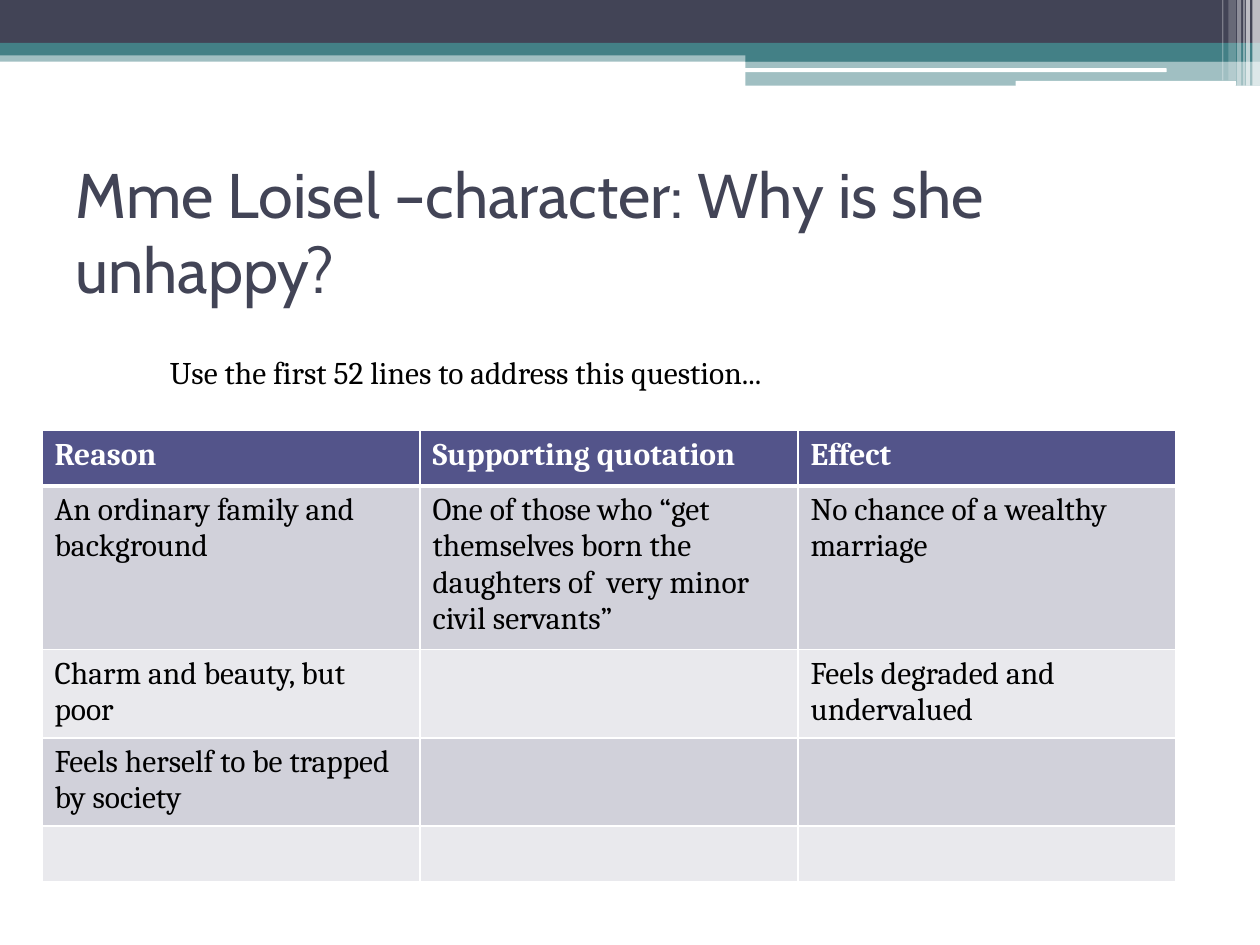
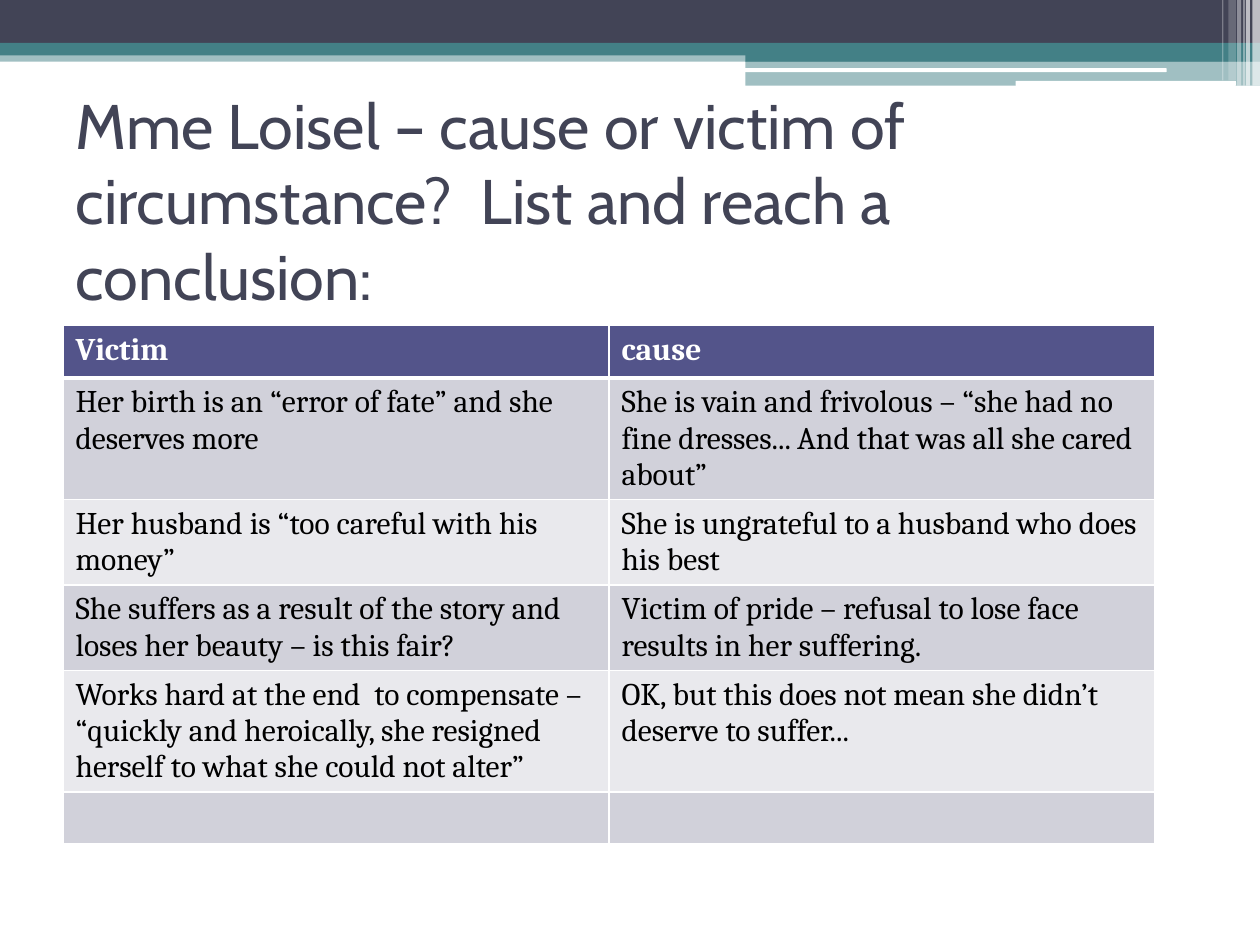
"""Build two discussion slides on Mme Loisel, each with a title and a table."""
from dataclasses import dataclass

from lxml import etree
from pptx import Presentation
from pptx.dml.color import RGBColor
from pptx.enum import shapes, text
from pptx.oxml import ns
from pptx.util import Pt


@dataclass(frozen=True)
class Theme:
    slate: str = "424456"
    teal: str = "438086"
    white: str = "FFFFFF"
    black: str = "000000"
    header: str = "53548A"
    stripes: tuple = ("D1D1DA", "E9E9ED")
    title_font: str = "Cabin"
    body_font: str = "Cambria"
    title_size: int = 36
    body_size: int = 18


theme = Theme()


def style_text(frame, font_name, size, color, bold=False):
    for paragraph in frame.paragraphs:
        paragraph.alignment = text.PP_ALIGN.LEFT
        for run in paragraph.runs:
            run.font.name = font_name
            run.font.size = Pt(size)
            run.font.bold = bold
            run.font.color.rgb = RGBColor.from_string(color)


def style_cell(cell, fill, edges):
    cell.fill.solid()
    cell.fill.fore_color.rgb = RGBColor.from_string(fill)
    properties = cell._tc.get_or_add_tcPr()
    for position, (edge, width) in enumerate(edges.items()):
        line = etree.Element(ns.qn(f"a:{edge}"), w=str(Pt(width)))
        paint = etree.SubElement(line, ns.qn("a:solidFill"))
        etree.SubElement(paint, ns.qn("a:srgbClr"), val=theme.white)
        properties.insert(position, line)


RECT = shapes.MSO_SHAPE.RECTANGLE
ROUND = shapes.MSO_SHAPE.ROUNDED_RECTANGLE
banner = [
    (RECT, 0, 28.8, 720, 6.5, theme.teal, 50),
    (RECT, 0, 0, 720, 24.5, theme.slate, 100),
    (RECT, 0, 24.5, 720, 7.2, theme.teal, 100),
    (RECT, 426, 28, 294, 7.2, theme.teal, 100),
    (RECT, 426, 34.8, 294, 14.2, theme.teal, 50),
    (ROUND, 425.5, 39, 241.2, 2.2, theme.white, 100),
    (ROUND, 580.3, 46.2, 126, 2.9, theme.white, 100),
    (RECT, 715.6, 0, 4.4, 49, theme.white, 65),
    (RECT, 712, 0, 2.2, 49, theme.white, 65),
    (RECT, 710.5, 0, 0.72, 49, theme.white, 60),
    (RECT, 707, 0, 2.2, 49, theme.white, 40),
    (RECT, 702, 0, 4.3, 46, theme.white, 20),
    (RECT, 698.4, 0, 0.72, 46, theme.white, 30),
]

discussions = [
    {
        "title": "Mme Loisel –character: Why is she unhappy?",
        "title_box": (36, 90, 648, 84),
        "table_box": (24, 246, 648),
        "row_heights": (31.7, 93.6, 50.4, 50.4, 31.7),
        "rows": [
            ("Reason", "Supporting quotation", "Effect"),
            ("An ordinary family and background",
             "One of those who “get themselves born the  daughters of  very minor civil servants”",
             "No chance of a wealthy marriage"),
            ("Charm and beauty, but poor", "", "Feels degraded and undervalued"),
            ("Feels herself to be trapped by society", "", ""),
            ("", "", ""),
        ],
        "instruction": "Use the first 52 lines to address this question...",
    },
    {
        "title": "Mme Loisel – cause or victim of circumstance?  List and reach a conclusion:",
        "title_box": (36, 54, 648, 120),
        "table_box": (36, 186, 624),
        "row_heights": (30,) + (29.2,) * 5,
        "rows": [
            ("Victim", "cause"),
            ("Her birth is an “error of fate” and she deserves more",
             "She is vain and frivolous – “she had no fine dresses... And that was all she cared about”"),
            ("Her husband is “too careful with his money”",
             "She is ungrateful to a husband who does his best"),
            ("She suffers as a result of the story and loses her beauty – is this fair?",
             "Victim of pride – refusal to lose face results in her suffering."),
            ("Works hard at the end  to compensate – “quickly and heroically, she resigned "
             "herself to what she could not alter”",
             "OK, but this does not mean she didn’t deserve to suffer..."),
            ("", ""),
        ],
    },
]

prs = Presentation()
prs.slide_width, prs.slide_height = Pt(720), Pt(540)
layout = prs.slide_layouts[5]

for discussion in discussions:
    slide = prs.slides.add_slide(layout)

    title = slide.shapes.title
    title.left, title.top, title.width, title.height = map(Pt, discussion["title_box"])
    title.text_frame.text = discussion["title"]
    title.text_frame.auto_size = text.MSO_AUTO_SIZE.NONE
    title.text_frame.vertical_anchor = text.MSO_ANCHOR.MIDDLE
    style_text(title.text_frame, theme.title_font, theme.title_size, theme.slate)

    rows = discussion["rows"]
    left, top, width = discussion["table_box"]
    heights = discussion["row_heights"]
    columns = len(rows[0])
    reasons = slide.shapes.add_table(
        len(rows), columns, Pt(left), Pt(top), Pt(width), Pt(sum(heights))).table
    for column in reasons.columns:
        column.width = Pt(width / columns)
    for r, (row, height) in enumerate(zip(rows, heights)):
        reasons.rows[r].height = Pt(height)
        is_header = r == 0
        fill = theme.header if is_header else theme.stripes[(r - 1) % 2]
        ink = theme.white if is_header else theme.black
        edges = {"lnL": 1, "lnR": 1, "lnT": 3 if r == 1 else 1, "lnB": 3 if is_header else 1}
        for c, wording in enumerate(row):
            cell = reasons.cell(r, c)
            cell.text_frame.text = wording
            style_text(cell.text_frame, theme.body_font, theme.body_size, ink, is_header)
            style_cell(cell, fill, edges)

    if "instruction" in discussion:
        instruction = slide.shapes.add_textbox(Pt(90), Pt(198), Pt(388.8), Pt(28.8)).text_frame
        instruction.word_wrap = False
        instruction.auto_size = text.MSO_AUTO_SIZE.SHAPE_TO_FIT_TEXT
        instruction.text = discussion["instruction"]
        style_text(instruction, theme.body_font, theme.body_size, theme.black)

for order, (outline, left, top, width, height, color, opacity) in enumerate(banner):
    band = prs.slides[0].shapes.add_shape(outline, Pt(left), Pt(top), Pt(width), Pt(height))
    band.shadow.inherit = False
    band.fill.solid()
    band.fill.fore_color.rgb = RGBColor.from_string(color)
    band.line.fill.background()
    if opacity < 100:
        paint = band.element.find(".//" + ns.qn("a:srgbClr"))
        etree.SubElement(paint, ns.qn("a:alpha"), val=str(opacity * 1000))
    band.element.nvSpPr.cNvPr.set("id", str(100 + order))
    layout.shapes.element.insert(2 + order, band.element)

prs.save("out.pptx")
